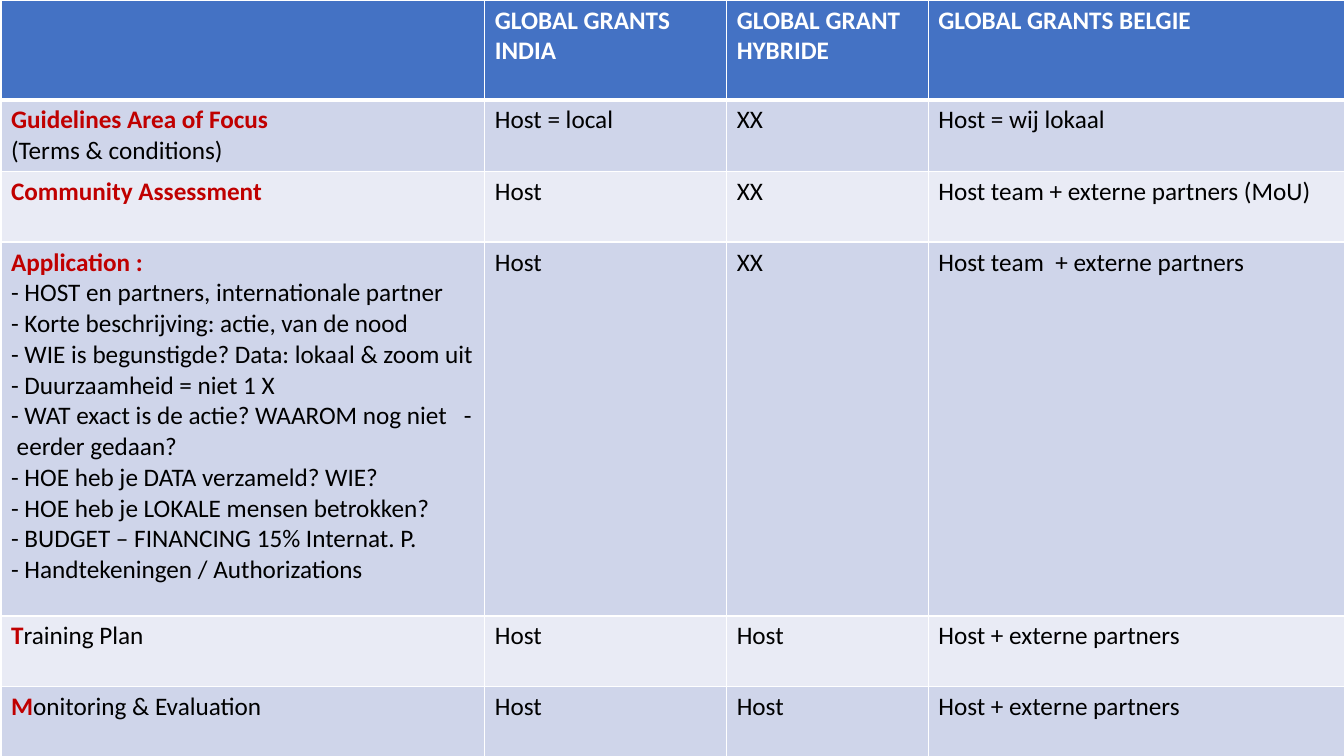
import pptx
import pptx.dml.color
import pptx.oxml
import pptx.oxml.ns
import pptx.util

SLIDE_WIDTH = pptx.util.Inches(13.33)
SLIDE_HEIGHT = pptx.util.Inches(7.5)
COLUMN_SHARES = [0.36, 0.18, 0.15, 0.31]
ROW_INCHES = [0.99, 0.7, 0.7, 3.71, 0.7, 0.7]
HEADER_FILL = "4472C4"
BAND_FILLS = ["E9EBF5", "CFD5EA"]
WHITE, BLACK, RED = "FFFFFF", "000000", "C00000"

APPLICATION = """Application :
- HOST en partners, internationale partner
- Korte beschrijving: actie, van de nood
- WIE is begunstigde? Data: lokaal & zoom uit
- Duurzaamheid = niet 1 X
- WAT exact is de actie? WAAROM nog niet   -  eerder gedaan?
- HOE heb je DATA verzameld? WIE?
- HOE heb je LOKALE mensen betrokken?
- BUDGET – FINANCING 15% Internat. P.
- Handtekeningen / Authorizations"""

ROWS = [
    ["", "GLOBAL GRANTS INDIA", "GLOBAL GRANT HYBRIDE", "GLOBAL GRANTS BELGIE"],
    ["Guidelines Area of Focus\n(Terms & conditions)", "Host = local", "XX", "Host = wij lokaal"],
    ["Community Assessment", "Host", "XX", "Host team + externe partners (MoU)"],
    [APPLICATION, "Host", "XX", "Host team  + externe partners"],
    ["Training Plan", "Host", "Host", "Host + externe partners"],
    ["Monitoring & Evaluation", "Host", "Host", "Host + externe partners"],
]
INITIAL_ONLY_ROWS = (4, 5)


def color(hex_string):
    return pptx.dml.color.RGBColor.from_string(hex_string)


def style_run(run, hex_string, bold):
    run.font.name = "Calibri"
    run.font.size = pptx.util.Pt(18)
    run.font.bold = bold
    run.font.color.rgb = color(hex_string)


def add_borders(cell, bottom_points, top_points):
    properties = cell._tc.get_or_add_tcPr()
    for side, points in (("L", 1), ("R", 1), ("T", top_points), ("B", bottom_points)):
        properties.append(pptx.oxml.parse_xml(
            f'<a:ln{side} {pptx.oxml.ns.nsdecls("a")} w="{pptx.util.Pt(points)}">'
            f'<a:solidFill><a:srgbClr val="{WHITE}"/></a:solidFill></a:ln{side}>'))


def fill_cell(cell, text, row, column):
    header = row == 0
    add_borders(cell, 3 if header else 1, 3 if row == 1 else 1)
    cell.fill.solid()
    cell.fill.fore_color.rgb = color(HEADER_FILL if header else BAND_FILLS[row % 2])
    cell.text_frame.text = text
    for paragraph in cell.text_frame.paragraphs:
        paragraph.font.size = pptx.util.Pt(18)
        for run in paragraph.runs:
            style_run(run, WHITE if header else BLACK, header)
    if column == 0 and not header:
        highlight_heading(cell.text_frame.paragraphs[0], row in INITIAL_ONLY_ROWS)


def highlight_heading(paragraph, initial_only):
    heading = paragraph.runs[0]
    if initial_only:
        remainder = paragraph.add_run()
        remainder.text = heading.text[1:]
        heading.text = heading.text[0]
        style_run(remainder, BLACK, False)
    style_run(heading, RED, True)


def add_grants_table(slide, left, top, width, height):
    frame = slide.shapes.add_table(len(ROWS), len(COLUMN_SHARES), left, top, width, height)
    table = frame.table
    for column, share in zip(table.columns, COLUMN_SHARES):
        column.width = int(width * share)
    for row, inches in zip(table.rows, ROW_INCHES):
        row.height = int(height * inches / sum(ROW_INCHES))
    for row, texts in enumerate(ROWS):
        for column, text in enumerate(texts):
            fill_cell(table.cell(row, column), text, row, column)


def main():
    presentation = pptx.Presentation()
    presentation.slide_width = SLIDE_WIDTH
    presentation.slide_height = SLIDE_HEIGHT
    slide = presentation.slides.add_slide(presentation.slide_layouts[6])
    add_grants_table(slide, pptx.util.Inches(0.01), 0, SLIDE_WIDTH, SLIDE_HEIGHT)
    presentation.save("out.pptx")


if __name__ == "__main__":
    main()
